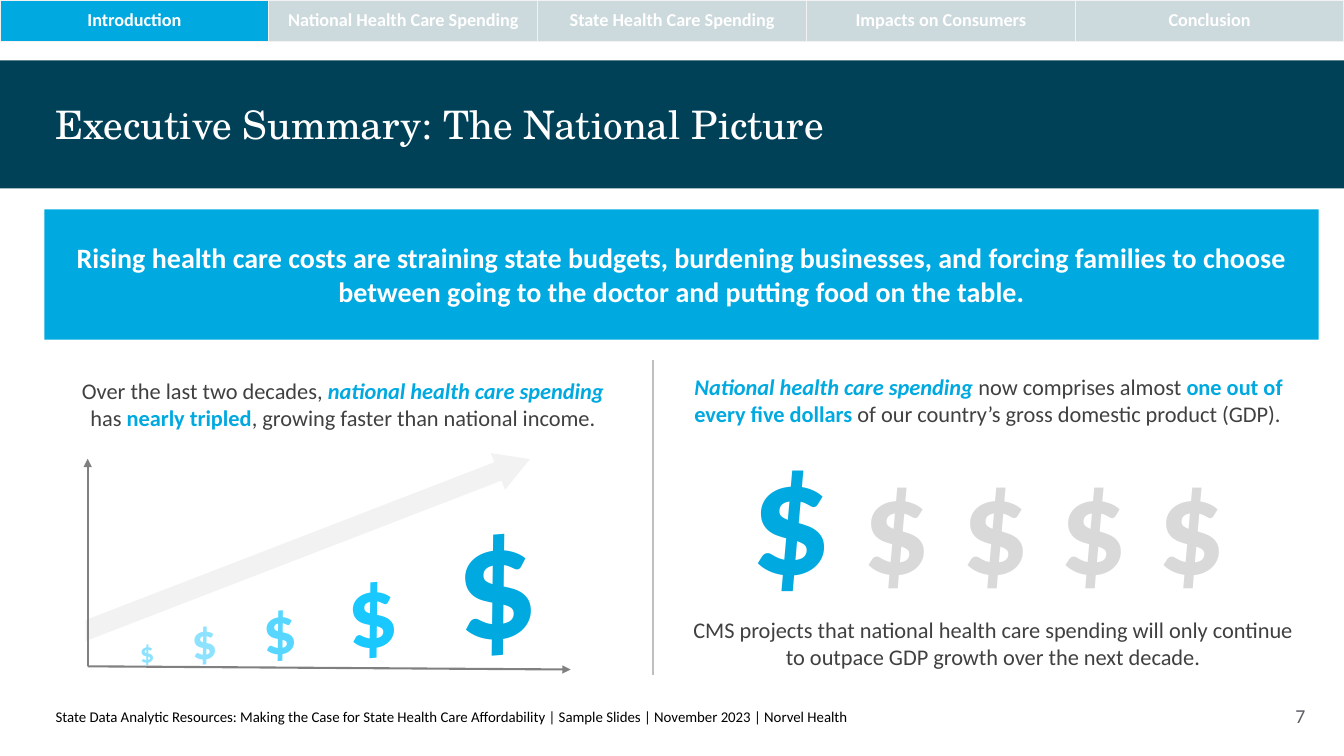
from typing import NamedTuple

from lxml.etree import SubElement
from pptx import Presentation
from pptx.dml.color import RGBColor
from pptx.enum.shapes import MSO_CONNECTOR as Connector
from pptx.enum.shapes import MSO_SHAPE as Preset
from pptx.enum.text import MSO_ANCHOR as Anchor
from pptx.enum.text import PP_ALIGN as Align
from pptx.oxml.ns import qn
from pptx.util import Cm, Pt

WIDTH, HEIGHT = 33.87, 19.05
BODY_FONT, TITLE_FONT = "Calibri", "TeX Gyre Schola"
BLUE, NAVY, WHITE, TEXT_GREY = "00A9E0", "004157", "FFFFFF", "404040"
TAB_GREY, PALE_GREY, DOLLAR_GREY = "CCD9DD", "F2F2F2", "D9D9D9"


class Box(NamedTuple):
    left: float
    top: float
    width: float
    height: float


class Insets(NamedTuple):
    left: float = 0.25
    top: float = 0.13
    right: float = 0.25
    bottom: float = 0.13


class Span(NamedTuple):
    text: str
    color: str = TEXT_GREY
    size: float = 16
    bold: bool = False
    italic: bool = False
    font: str = BODY_FONT


class Dollar(NamedTuple):
    """A dollar sign of the growth chart, placed by the centre of its glyph."""
    x: float
    y: float
    size: float
    color: str


TABS = ["Introduction", "National Health Care Spending", "State Health Care Spending",
        "Impacts on Consumers", "Conclusion"]
GROWING_DOLLARS = [
    Dollar(3.7, 16.51, 20, "8DE3FF"),
    Dollar(5.14, 16.25, 36, "8DE3FF"),
    Dollar(7.03, 16.0, 48, "57D7FF"),
    Dollar(9.37, 15.6, 72, "19C8FF"),
    Dollar(12.47, 14.94, 115, BLUE),
]
GLYPH_DROP = 0.117  # glyph centre below the line's middle, in ems
CM_PER_POINT = 2.54 / 72


def rgb(color: str) -> RGBColor:
    return RGBColor.from_string(color)


def place(box: Box) -> list:
    return [Cm(length) for length in box]


def fill_paragraph(paragraph, spans: list[Span], align=Align.CENTER) -> None:
    paragraph.alignment = align
    for span in spans:
        run = paragraph.add_run()
        run.text = span.text
        run.font.name = span.font
        run.font.size = Pt(span.size)
        run.font.bold = span.bold
        run.font.italic = span.italic
        run.font.color.rgb = rgb(span.color)


def write(shape, spans: list[Span], align=Align.CENTER, anchor=Anchor.TOP,
          insets: Insets = Insets(), wrap: bool = True) -> None:
    frame = shape.text_frame
    frame.word_wrap = wrap
    frame.vertical_anchor = anchor
    frame.margin_left, frame.margin_top, frame.margin_right, frame.margin_bottom = place(insets)
    fill_paragraph(frame.paragraphs[0], spans, align)


def add_text(slide, box: Box, spans: list[Span], **layout):
    shape = slide.shapes.add_textbox(*place(box))
    write(shape, spans, **layout)
    return shape


def add_block(slide, box: Box, color: str, preset=Preset.RECTANGLE):
    shape = slide.shapes.add_shape(preset, *place(box))
    shape.shadow.inherit = False
    shape.fill.solid()
    shape.fill.fore_color.rgb = rgb(color)
    shape.line.fill.background()
    return shape


def add_line(slide, start: tuple, end: tuple, color: str, width: float,
             arrow_at_start: bool = False) -> None:
    line = slide.shapes.add_connector(Connector.STRAIGHT, *place(start + end))
    line.line.color.rgb = rgb(color)
    line.line.width = Pt(width)
    if arrow_at_start:
        SubElement(line.line._get_or_add_ln(), qn("a:headEnd"), type="triangle")
    SubElement(line._element.spPr, qn("a:effectLst"))


def add_cell_borders(cell, color: str, width: float) -> None:
    properties = cell._tc.get_or_add_tcPr()
    for index, side in enumerate(("lnL", "lnR", "lnT", "lnB")):
        border = properties.makeelement(qn(f"a:{side}"), {"w": str(Pt(width))})
        fill = SubElement(border, qn("a:solidFill"))
        SubElement(fill, qn("a:srgbClr"), val=color)
        properties.insert(index, border)


def add_tabs(slide) -> None:
    table = slide.shapes.add_table(1, len(TABS), *place(Box(0, 0, WIDTH, 1.04))).table
    table.first_row = table.horz_banding = False
    for index, name in enumerate(TABS):
        cell = table.cell(0, index)
        cell.fill.solid()
        cell.fill.fore_color.rgb = rgb(BLUE if index == 0 else TAB_GREY)
        cell.vertical_anchor = Anchor.MIDDLE
        fill_paragraph(cell.text_frame.paragraphs[0], [Span(name, WHITE, 13, bold=True)])
        add_cell_borders(cell, PALE_GREY, 1)


def add_growth_chart(slide) -> None:
    trend = add_block(slide, Box(1.35, 13.31, 12.42, 0.99), PALE_GREY, Preset.RIGHT_ARROW)
    trend.adjustments[0], trend.adjustments[1] = 0.5, 0.87
    trend.rotation = 338.9
    add_block(slide, Box(1.63, 15.54, 0.53, 1.45), WHITE)
    origin = (2.21, 16.79)
    for tip in ((2.21, 11.56), (14.38, 16.87)):
        add_line(slide, tip, origin, "808080", 1.5, arrow_at_start=True)
    for dollar in GROWING_DOLLARS:
        em = dollar.size * CM_PER_POINT
        width, height = em, 1.22 * em
        box = Box(dollar.x - width / 2, dollar.y - GLYPH_DROP * em - height / 2, width, height)
        sign = add_text(slide, box, [Span("$", dollar.color, dollar.size, bold=True)],
                        anchor=Anchor.MIDDLE, insets=Insets(0, 0, 0, 0), wrap=False)
        sign.rotation = 355.6


def add_left_column(slide) -> None:
    add_text(slide, Box(1.37, 9.5, 14.55, 1.63), [
        Span("Over the last two decades, "),
        Span("national health care spending ", BLUE, bold=True, italic=True),
        Span("has "),
        Span("nearly tripled", BLUE, bold=True),
        Span(", growing faster than national income."),
    ], insets=Insets(0.28, 0, 0.28, 0.15))
    add_growth_chart(slide)


def add_right_column(slide) -> None:
    add_text(slide, Box(17.25, 9.27, 15.65, 1.63), [
        Span("National health care spending ", BLUE, bold=True, italic=True),
        Span("now comprises almost "),
        Span("one out of every five dollars ", BLUE, bold=True),
        Span("of our country’s gross domestic product (GDP)."),
    ], align=Align.LEFT)
    add_text(slide, Box(17.98, 10.29, 13.87, 5.18), [
        Span("$", BLUE, 115, bold=True),
        Span(" $" * 4, DOLLAR_GREY, 96, bold=True),
    ])
    add_text(slide, Box(17.17, 15.39, 15.72, 1.63), [
        Span("CMS projects that national health care spending will only continue "
             "to outpace GDP growth over the next decade."),
    ])


def add_footer(slide) -> None:
    footer = add_text(slide, Box(1.12, 17.83, 22.61, 0.56), [
        Span("State Data Analytic Resources: Making the Case for State Health Care Affordability"
             " | Sample Slides | November 2023 | Norvel Health", "000000", 10.6),
    ], align=Align.LEFT, anchor=Anchor.MIDDLE, insets=Insets(0.28, 0, 0, 0))
    footer.text_frame.paragraphs[0].line_spacing = 0.8
    add_text(slide, Box(32.21, 17.32, 1.12, 1.45), [Span("7", "5C5E66", 14.1)],
             anchor=Anchor.MIDDLE, insets=Insets(0, 0, 0, 0), wrap=False)


def main() -> None:
    presentation = Presentation()
    presentation.slide_width, presentation.slide_height = Cm(WIDTH), Cm(HEIGHT)
    slide = presentation.slides.add_slide(presentation.slide_layouts[6])
    add_tabs(slide)
    add_block(slide, Box(0, 1.52, WIDTH, 3.23), NAVY)
    add_text(slide, Box(1.12, 2.39, 30.3, 1.45),
             [Span("Executive Summary: The National Picture", WHITE, 28, font=TITLE_FONT)],
             align=Align.LEFT, anchor=Anchor.MIDDLE, insets=Insets(0.28, 0.15, 0.28, 0.15))
    banner = add_block(slide, Box(1.12, 5.28, 32.11, 3.28), BLUE)
    write(banner, [Span("Rising health care costs are straining state budgets, burdening businesses, "
                        "and forcing families to choose between going to the doctor and putting "
                        "food on the table.", WHITE, 20, bold=True)],
          anchor=Anchor.MIDDLE, insets=Insets(0.51, 0.51, 0.51, 0.51))
    add_line(slide, (16.46, 9.07), (16.46, 17.02), "BFBFBF", 1)
    add_left_column(slide)
    add_right_column(slide)
    add_footer(slide)
    presentation.save("out.pptx")


if __name__ == "__main__":
    main()
